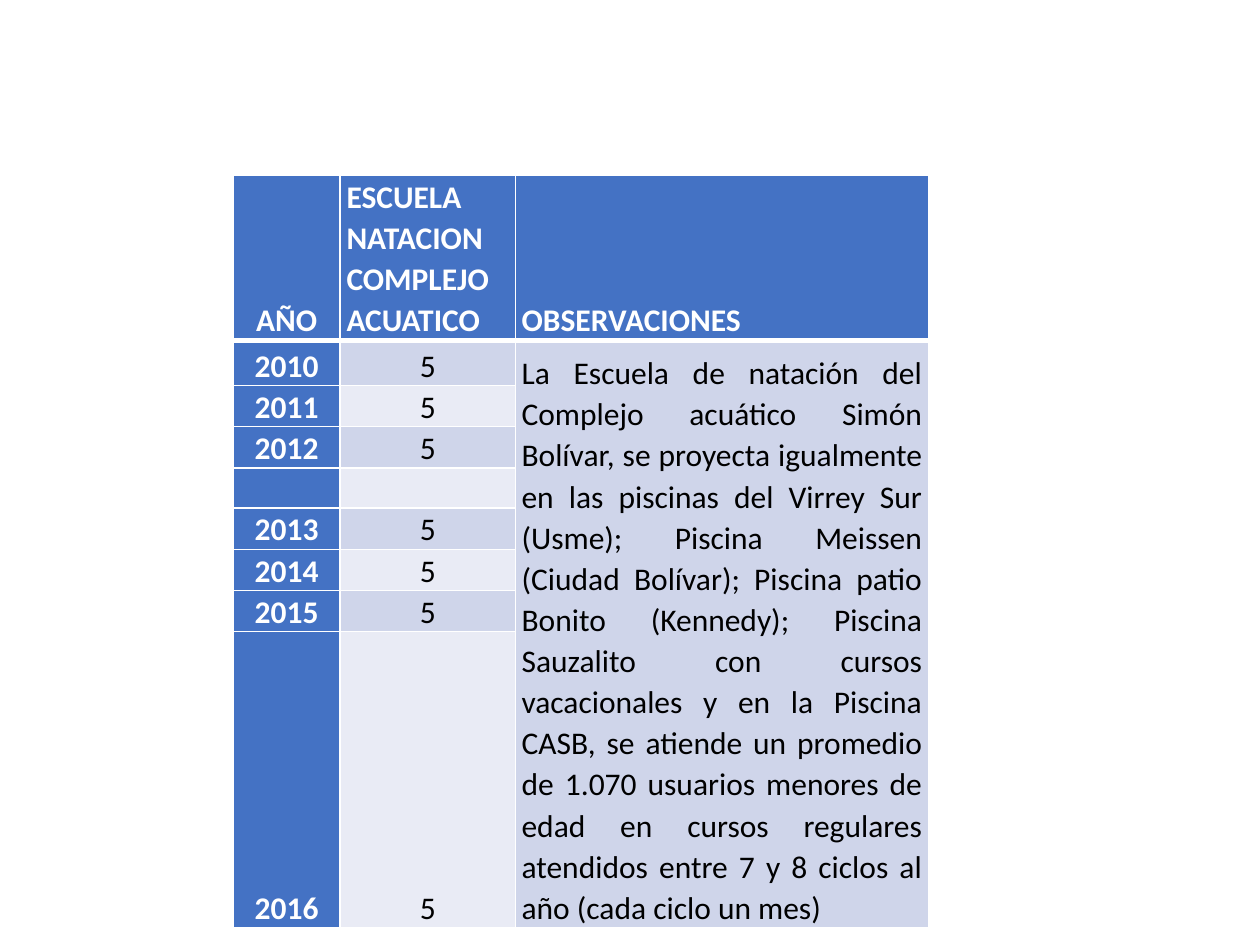
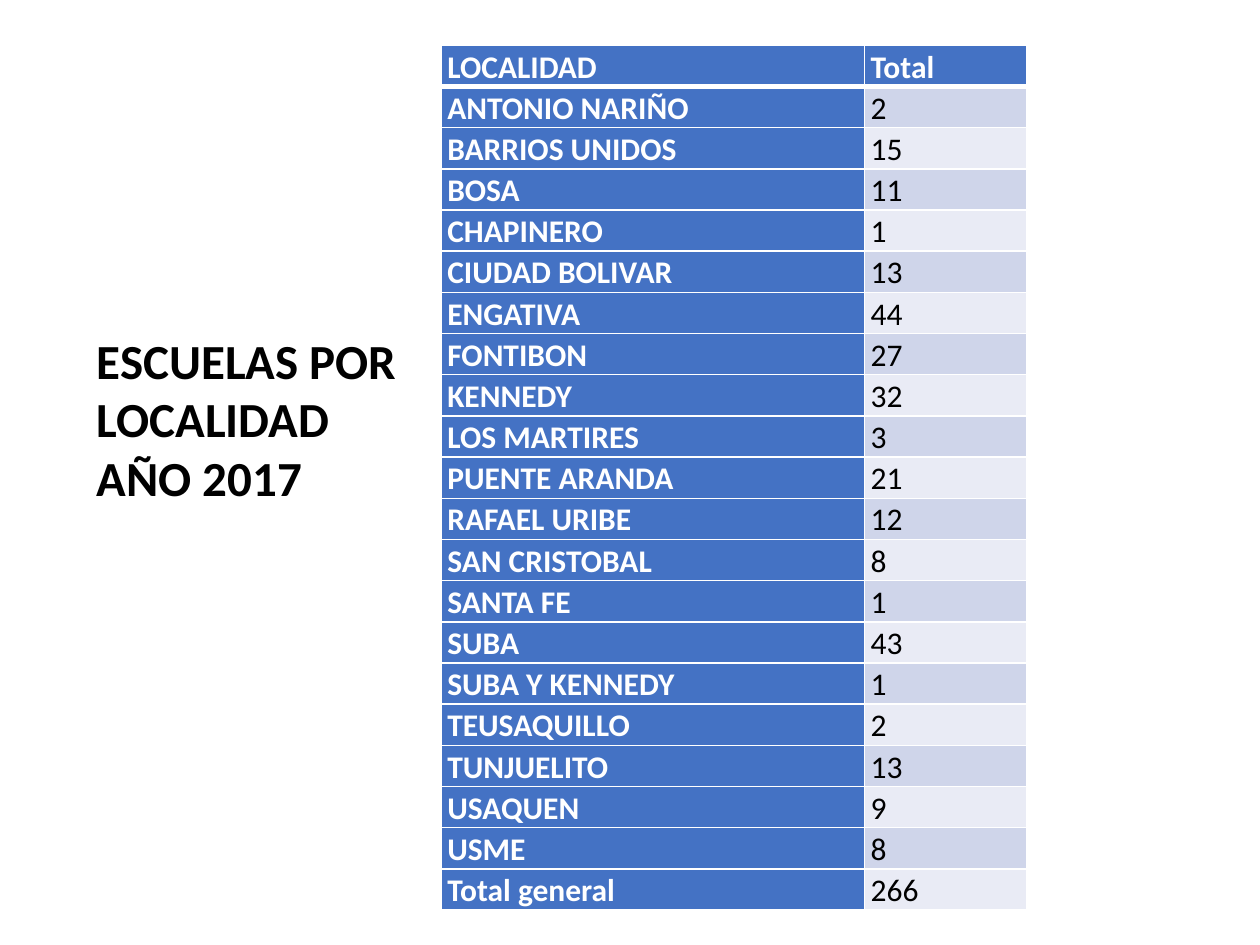
from dataclasses import dataclass

from lxml.etree import SubElement
from pptx import Presentation
from pptx.dml.color import RGBColor
from pptx.enum.text import MSO_ANCHOR, MSO_AUTO_SIZE, PP_ALIGN as Align
from pptx.oxml.ns import qn
from pptx.slide import Slide
from pptx.table import _Cell as Cell
from pptx.text.text import _Paragraph as Paragraph
from pptx.util import Inches, Pt

BLUE = RGBColor(0x44, 0x72, 0xC4)
BAND_DARK = RGBColor(0xCF, 0xD5, 0xEA)
BAND_LIGHT = RGBColor(0xE9, 0xEB, 0xF5)
WHITE = RGBColor(0xFF, 0xFF, 0xFF)
BLACK = RGBColor(0x00, 0x00, 0x00)
FONT = "Calibri"
ROW_HEIGHT = 0.32
THIN, THICK = 1, 3

OBSERVATIONS = (
    "La Escuela de natación del Complejo acuático Simón Bolívar, se proyecta "
    "igualmente en las piscinas del Virrey Sur (Usme); Piscina Meissen (Ciudad "
    "Bolívar); Piscina patio Bonito (Kennedy); Piscina Sauzalito con cursos "
    "vacacionales y en la Piscina CASB, se atiende un promedio de 1.070 usuarios "
    "menores de edad en cursos regulares atendidos entre 7 y 8 ciclos al año "
    "(cada ciclo un mes)"
)


@dataclass(frozen=True)
class Grid:
    left: float
    top: float
    widths: tuple[float, ...]
    heights: tuple[float, ...]
    rows: tuple[tuple[str, ...], ...]
    header_aligns: tuple[Align, ...]
    body_aligns: tuple[Align, ...]
    merge_last_column: bool = False


SWIMMING_SCHOOLS = Grid(
    left=1.85,
    top=1.39,
    widths=(0.85, 1.39, 3.28),
    heights=(1.31, 0.36, *[ROW_HEIGHT] * 6, 2.35),
    rows=(
        ("AÑO", "ESCUELA NATACION COMPLEJO ACUATICO", "OBSERVACIONES"),
        ("2010", "5", OBSERVATIONS),
        ("2011", "5", ""),
        ("2012", "5", ""),
        ("", "", ""),
        ("2013", "5", ""),
        ("2014", "5", ""),
        ("2015", "5", ""),
        ("2016", "5", ""),
    ),
    header_aligns=(Align.CENTER, Align.LEFT, Align.LEFT),
    body_aligns=(Align.CENTER, Align.CENTER, Align.JUSTIFY),
    merge_last_column=True,
)

DISTRICT_ROWS = (
    ("LOCALIDAD", "Total"),
    ("ANTONIO NARIÑO", "2"),
    ("BARRIOS UNIDOS", "15"),
    ("BOSA", "11"),
    ("CHAPINERO", "1"),
    ("CIUDAD BOLIVAR", "13"),
    ("ENGATIVA", "44"),
    ("FONTIBON", "27"),
    ("KENNEDY", "32"),
    ("LOS MARTIRES", "3"),
    ("PUENTE ARANDA", "21"),
    ("RAFAEL URIBE", "12"),
    ("SAN CRISTOBAL", "8"),
    ("SANTA FE", "1"),
    ("SUBA", "43"),
    ("SUBA Y KENNEDY", "1"),
    ("TEUSAQUILLO", "2"),
    ("TUNJUELITO", "13"),
    ("USAQUEN", "9"),
    ("USME", "8"),
    ("Total general", "266"),
)

DISTRICT_SCHOOLS = Grid(
    left=3.5,
    top=0.36,
    widths=(3.36, 1.29),
    heights=(ROW_HEIGHT,) * len(DISTRICT_ROWS),
    rows=DISTRICT_ROWS,
    header_aligns=(Align.JUSTIFY,) * 2,
    body_aligns=(Align.JUSTIFY,) * 2,
)


def set_font(paragraph: Paragraph, size: int, color: RGBColor, bold: bool) -> None:
    font = paragraph.font
    font.name = FONT
    font.size = Pt(size)
    font.bold = bold
    font.color.rgb = color


def set_borders(cell: Cell, top: int, bottom: int) -> None:
    properties = cell._tc.get_or_add_tcPr()
    edges = {"a:lnL": THIN, "a:lnR": THIN, "a:lnT": top, "a:lnB": bottom}
    for edge, weight in edges.items():
        line = SubElement(properties, qn(edge), w=str(Pt(weight)))
        fill = SubElement(line, qn("a:solidFill"))
        SubElement(fill, qn("a:srgbClr"), val=str(WHITE))


def fill_cell(cell: Cell, grid: Grid, row: int, column: int) -> None:
    is_label = row == 0 or column == 0
    aligns = grid.body_aligns if row else grid.header_aligns
    band = BAND_DARK if row % 2 else BAND_LIGHT
    set_borders(
        cell,
        top=THICK if row == 1 else THIN,
        bottom=THICK if row == 0 else THIN,
    )
    cell.fill.solid()
    cell.fill.fore_color.rgb = BLUE if is_label else band
    cell.vertical_anchor = MSO_ANCHOR.BOTTOM
    cell.margin_left = cell.margin_right = Inches(0.05)
    cell.margin_top = cell.margin_bottom = 0
    cell.text = grid.rows[row][column]
    paragraph = cell.text_frame.paragraphs[0]
    paragraph.alignment = aligns[column]
    paragraph.line_spacing = 1.07
    set_font(paragraph, 18, WHITE if is_label else BLACK, is_label)


def add_grid(slide: Slide, grid: Grid) -> None:
    table = slide.shapes.add_table(
        len(grid.rows),
        len(grid.widths),
        Inches(grid.left),
        Inches(grid.top),
        Inches(sum(grid.widths)),
        Inches(sum(grid.heights)),
    ).table
    for column, width in enumerate(grid.widths):
        table.columns[column].width = Inches(width)
    for row, height in enumerate(grid.heights):
        table.rows[row].height = Inches(height)
        for column in range(len(grid.widths)):
            fill_cell(table.cell(row, column), grid, row, column)
    if grid.merge_last_column:
        last = len(grid.widths) - 1
        table.cell(1, last).merge(table.cell(len(grid.rows) - 1, last))


def add_heading(slide: Slide, text: str) -> None:
    heading = slide.shapes.add_textbox(
        Inches(0.67), Inches(2.57), Inches(2.68), Inches(1.51)
    )
    frame = heading.text_frame
    frame.word_wrap = True
    frame.auto_size = MSO_AUTO_SIZE.SHAPE_TO_FIT_TEXT
    frame.text = text
    set_font(frame.paragraphs[0], 28, BLACK, True)


def main() -> None:
    deck = Presentation()
    deck.slide_width, deck.slide_height = Inches(10), Inches(7.5)
    blank = deck.slide_layouts[6]

    add_grid(deck.slides.add_slide(blank), SWIMMING_SCHOOLS)

    districts = deck.slides.add_slide(blank)
    add_grid(districts, DISTRICT_SCHOOLS)
    add_heading(districts, "ESCUELAS POR LOCALIDAD AÑO 2017")

    deck.save("out.pptx")


if __name__ == "__main__":
    main()
